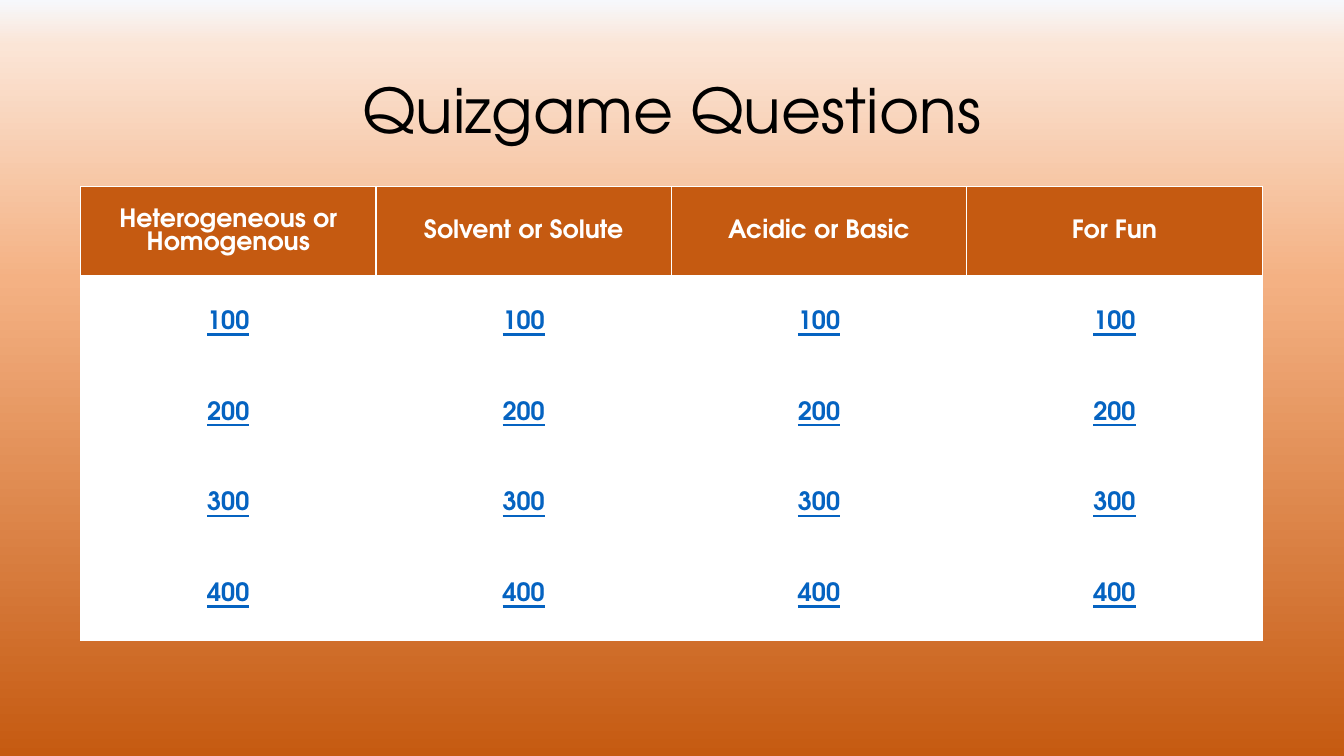
from lxml.etree import SubElement
from pptx import Presentation
from pptx.dml.color import RGBColor
from pptx.enum.text import MSO_ANCHOR as Anchor, PP_ALIGN as Align
from pptx.oxml.ns import qn
from pptx.util import Pt

FONT = "TeX Gyre Adventor"
BLACK = RGBColor(0x00, 0x00, 0x00)
WHITE = RGBColor(0xFF, 0xFF, 0xFF)
ORANGE = RGBColor(0xC5, 0x5A, 0x11)
LINK_BLUE = RGBColor(0x05, 0x63, 0xC1)
BACKGROUND_STOPS = [
    (0, RGBColor(0xF6, 0xF8, 0xFC)),
    (6, RGBColor(0xFB, 0xE5, 0xD6)),
    (37, RGBColor(0xF4, 0xB1, 0x83)),
    (100, ORANGE),
]
CATEGORIES = ["Heterogeneous or Homogenous", "Solvent or Solute", "Acidic or Basic", "For Fun"]
POINTS = ["100", "200", "300", "400"]


def format_text(paragraph, size, color):
    paragraph.alignment = Align.CENTER
    font = paragraph.runs[0].font
    font.name = FONT
    font.size = Pt(size)
    font.color.rgb = color
    return font


def add_border(cell, side, width):
    line = SubElement(cell._tc.get_or_add_tcPr(), qn(f"a:{side}"), w=str(Pt(width)))
    fill = SubElement(line, qn("a:solidFill"))
    SubElement(fill, qn("a:srgbClr"), val=str(WHITE))


presentation = Presentation()
presentation.slide_width = Pt(960)
presentation.slide_height = Pt(540)
slide = presentation.slides.add_slide(presentation.slide_layouts[6])

background = slide.background.fill
background.gradient()
background.gradient_angle = 270
stop_list = slide.element.find(f".//{qn('a:gsLst')}")
stop_list.clear()
for position, color in BACKGROUND_STOPS:
    stop = SubElement(stop_list, qn("a:gs"), pos=str(position * 1000))
    SubElement(stop, qn("a:srgbClr"), val=str(color))

title = slide.shapes.add_textbox(Pt(66), Pt(28.8), Pt(828), Pt(104.4))
title.text_frame.word_wrap = True
title.text_frame.vertical_anchor = Anchor.MIDDLE
title.text_frame.text = "Quizgame Questions"
title_paragraph = title.text_frame.paragraphs[0]
title_paragraph.line_spacing = 0.9
format_text(title_paragraph, 44, BLACK)

rows = [CATEGORIES] + [[value] * len(CATEGORIES) for value in POINTS]
board = slide.shapes.add_table(
    len(rows), len(CATEGORIES), Pt(57.6), Pt(133.2), Pt(844), Pt(324)
).table

for row_index, row in enumerate(rows):
    is_header = row_index == 0
    for column_index, text in enumerate(row):
        cell = board.cell(row_index, column_index)
        cell.text = text
        cell.vertical_anchor = Anchor.MIDDLE
        font = format_text(
            cell.text_frame.paragraphs[0], 18, WHITE if is_header else LINK_BLUE
        )
        font.bold = True
        font.underline = not is_header
        for side in ("lnL", "lnR", "lnT", "lnB"):
            at_header_base = (row_index, side) in ((0, "lnB"), (1, "lnT"))
            add_border(cell, side, 3 if at_header_base else 1)
        cell.fill.solid()
        cell.fill.fore_color.rgb = ORANGE if is_header else WHITE

presentation.save("out.pptx")
